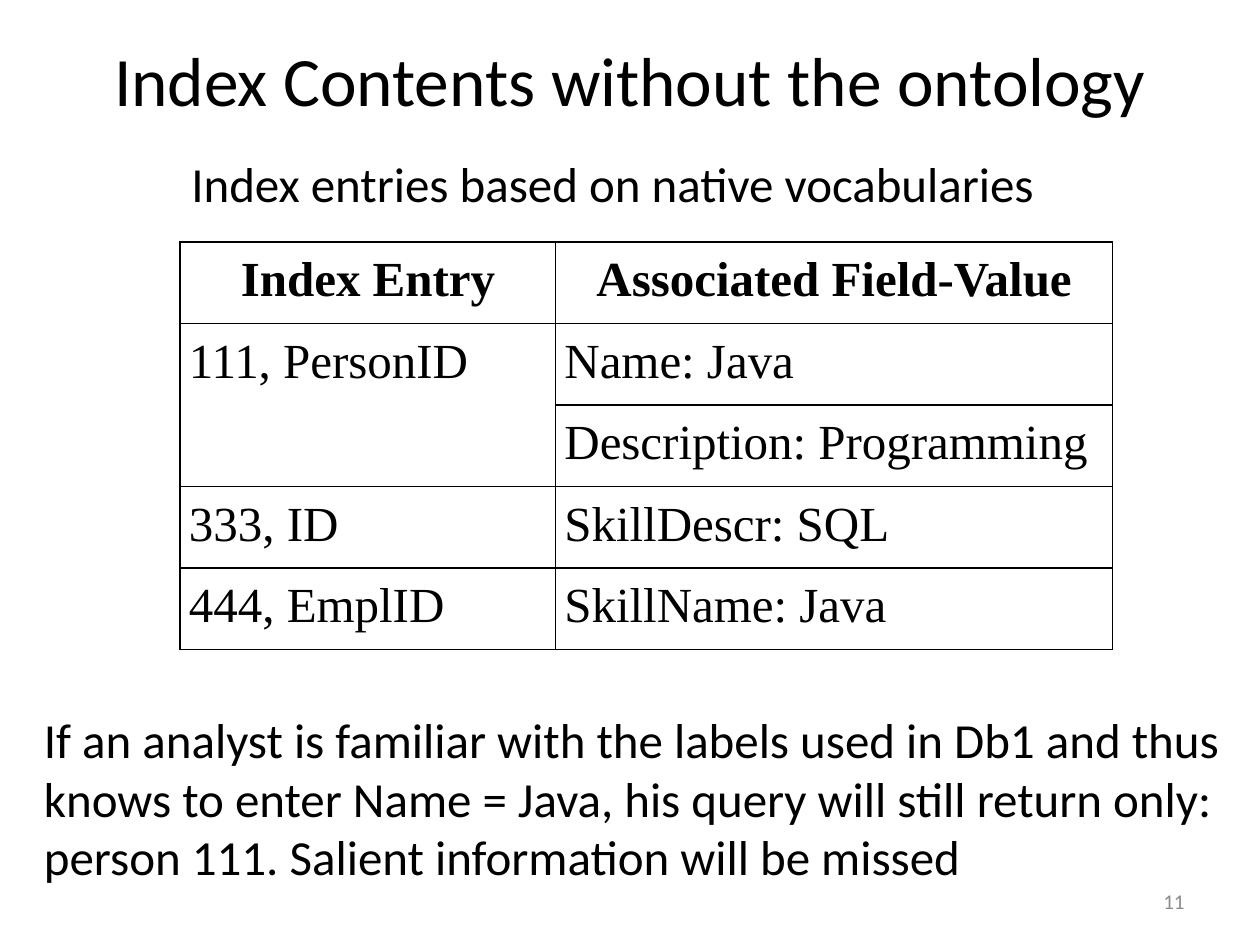
from lxml.etree import SubElement
from pptx import Presentation
from pptx.dml.color import RGBColor
from pptx.enum.text import MSO_ANCHOR as Anchor, PP_ALIGN as Align
from pptx.oxml.ns import qn
from pptx.util import Inches, Pt


def add_run(paragraph, text, size, font="Calibri", color="000000", bold=False):
    run = paragraph.add_run()
    run.text = text
    run.font.size = Pt(size)
    run.font.name = font
    run.font.bold = bold
    run.font.color.rgb = RGBColor.from_string(color)


def add_border(cell):
    properties = cell._tc.get_or_add_tcPr()
    for side in ("lnL", "lnR", "lnT", "lnB"):
        line = SubElement(properties, qn(f"a:{side}"), w=str(Pt(1)))
        SubElement(SubElement(line, qn("a:solidFill")), qn("a:srgbClr"), val="000000")


prs = Presentation()
prs.slide_width = Inches(10)
prs.slide_height = Inches(7.5)
slide = prs.slides.add_slide(prs.slide_layouts[6])

texts = [
    ("Index Contents without the ontology", 0.5, 0, 9, 1.25,
     39.6, "000000", Align.CENTER, Anchor.MIDDLE),
    ("Index entries based on native vocabularies", 1.42, 1.17, 7.42, 0.57,
     28, "000000", Align.LEFT, Anchor.TOP),
    ("11", 7.17, 6.95, 2.33, 0.4, 12, "8C8C8C", Align.RIGHT, Anchor.MIDDLE),
    ("If an analyst is familiar with the labels used in Db1 and thus knows to enter "
     "Name = Java, his query will still return only: person 111. "
     "Salient information will be missed", 0.25, 5.58, 9.58, 1.51,
     28, "000000", Align.LEFT, Anchor.TOP),
]
for text, left, top, width, height, size, color, align, anchor in texts:
    frame = slide.shapes.add_textbox(
        Inches(left), Inches(top), Inches(width), Inches(height)).text_frame
    frame.word_wrap = True
    frame.vertical_anchor = anchor
    frame.paragraphs[0].alignment = align
    add_run(frame.paragraphs[0], text, size, color=color)

entries = [
    ("Index Entry", "Associated Field-Value"),
    ("111, PersonID", "Name: Java"),
    ("", "Description: Programming"),
    ("333, ID", "SkillDescr: SQL"),
    ("444, EmplID", "SkillName: Java"),
]
row_height = 0.63
index = slide.shapes.add_table(
    len(entries), 2, Inches(1.43), Inches(1.92),
    Inches(7.4), Inches(row_height * len(entries))).table
index.first_row = False
index.horz_banding = False
for column, width in zip(index.columns, (2.98, 4.42)):
    column.width = Inches(width)
for row in index.rows:
    row.height = Inches(row_height)

for r, entry in enumerate(entries):
    for c, text in enumerate(entry):
        cell = index.cell(r, c)
        cell.margin_left = cell.margin_right = Inches(0.07)
        cell.margin_top = cell.margin_bottom = Inches(0.09)
        add_border(cell)
        cell.fill.background()
        if text:
            paragraph = cell.text_frame.paragraphs[0]
            paragraph.alignment = Align.CENTER if r == 0 else Align.LEFT
            add_run(paragraph, text, 28, "Times New Roman", bold=r == 0)
index.cell(1, 0).merge(index.cell(2, 0))

prs.save("out.pptx")
